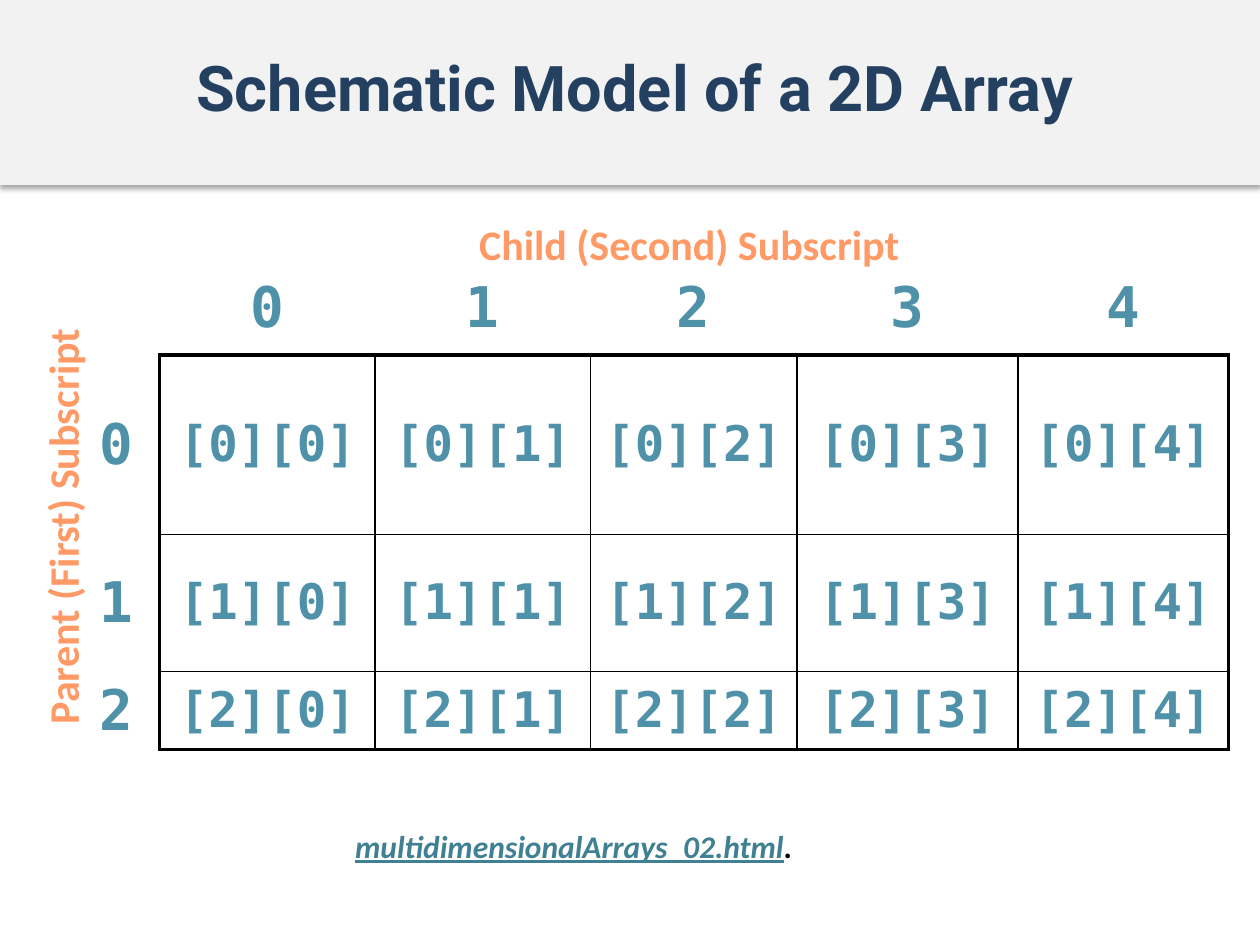
from lxml.etree import SubElement
from pptx import Presentation
from pptx.dml.color import RGBColor
from pptx.enum.shapes import MSO_SHAPE
from pptx.enum.text import MSO_ANCHOR, MSO_AUTO_SIZE, PP_ALIGN
from pptx.oxml.ns import qn
from pptx.util import Cm, Pt

COLORS = {
    "band": "F2F2F2",
    "title": "244061",
    "subscript": "4E91A8",
    "axis": "FF9966",
    "link": "408093",
    "black": "000000",
}
COLUMN_WIDTHS = [1.75, 4.34, 4.34, 4.17, 4.45, 4.24]
ROW_HEIGHTS = [1.9, 3.61, 2.77, 1.57]
PLAIN_TABLE_STYLE = "{2D5ABB26-0587-4C30-8999-92F81FD0307C}"
THICK, THIN = 2.25, 1


def add_run(paragraph, text, font_name, size, color, bold=True):
    run = paragraph.add_run()
    run.text = text
    run.font.name = font_name
    run.font.size = Pt(size)
    run.font.bold = bold
    run.font.color.rgb = RGBColor.from_string(COLORS[color])
    return run


def add_solid_fill(parent, color, alpha=None):
    fill = SubElement(parent, qn("a:solidFill")) if alpha is None else parent
    color_element = SubElement(fill, qn("a:srgbClr"), val=COLORS[color])
    if alpha is not None:
        SubElement(color_element, qn("a:alpha"), val=str(alpha * 1000))


def add_band(slide, left, top, width, height):
    band = slide.shapes.add_shape(
        MSO_SHAPE.RECTANGLE, Cm(left), Cm(top), Cm(width), Cm(height))
    band.fill.solid()
    band.fill.fore_color.rgb = RGBColor.from_string(COLORS["band"])
    band.line.fill.background()
    band.shadow.inherit = False
    effects = band.element.spPr.find(qn("a:effectLst"))
    shadow = SubElement(
        effects, qn("a:outerShdw"), blurRad=str(Pt(3.1)), dist=str(Pt(1.8)),
        dir="5400000", rotWithShape="0")
    add_solid_fill(shadow, "black", alpha=35)
    slide.shapes.element.insert(2, band.element)


def add_title(slide, left, top, width, height):
    add_band(slide, 0, 0, 25.4, 3.73)
    title = slide.shapes.title
    title.left, title.top = Cm(left), Cm(top)
    title.width, title.height = Cm(width), Cm(height)
    title.text_frame.vertical_anchor = MSO_ANCHOR.MIDDLE
    paragraph = title.text_frame.paragraphs[0]
    paragraph.alignment = PP_ALIGN.CENTER
    add_run(paragraph, "Schematic Model of a 2D Array", "Roboto", 36, "title")


def add_text_box(slide, left, top, width, height, wrap=True):
    box = slide.shapes.add_textbox(Cm(left), Cm(top), Cm(width), Cm(height))
    box.text_frame.word_wrap = wrap
    box.text_frame.auto_size = MSO_AUTO_SIZE.SHAPE_TO_FIT_TEXT
    return box


def add_axis_label(slide, text, left, top, width, height, rotation=0):
    box = add_text_box(slide, left, top, width, height)
    box.rotation = rotation
    paragraph = box.text_frame.paragraphs[0]
    paragraph.alignment = PP_ALIGN.CENTER
    add_run(paragraph, text, "Calibri", 24, "axis")


def set_borders(cell, widths):
    properties = cell._tc.get_or_add_tcPr()
    for side in "LRTB":
        width = widths.get(side, 0)
        line = SubElement(properties, qn(f"a:ln{side}"), w=str(Pt(width)))
        if width:
            add_solid_fill(line, "black")
        else:
            SubElement(line, qn("a:noFill"))


def border_widths(row, column):
    last_row, last_column = len(ROW_HEIGHTS) - 1, len(COLUMN_WIDTHS) - 1
    if row and column:
        return {
            "L": THICK if column == 1 else THIN,
            "R": THICK if column == last_column else THIN,
            "T": THICK if row == 1 else THIN,
            "B": THICK if row == last_row else THIN,
        }
    if row:
        return {"R": THICK}
    return {"B": THICK} if column else {}


def cell_text(row, column):
    if row and column:
        return f"[{row - 1}][{column - 1}]"
    return str(max(row, column) - 1) if row or column else ""


def add_array_table(slide, left, top):
    frame = slide.shapes.add_table(
        len(ROW_HEIGHTS), len(COLUMN_WIDTHS), Cm(left), Cm(top),
        Cm(sum(COLUMN_WIDTHS)), Cm(sum(ROW_HEIGHTS)))
    table = frame.table
    table.first_row = table.horz_banding = False
    next(frame.element.iter(qn("a:tableStyleId"))).text = PLAIN_TABLE_STYLE
    for column, width in zip(table.columns, COLUMN_WIDTHS):
        column.width = Cm(width)
    for row_index, height in enumerate(ROW_HEIGHTS):
        table.rows[row_index].height = Cm(height)
        for column_index in range(len(COLUMN_WIDTHS)):
            cell = table.cell(row_index, column_index)
            cell.vertical_anchor = MSO_ANCHOR.MIDDLE
            set_borders(cell, border_widths(row_index, column_index))
            cell.fill.background()
            text = cell_text(row_index, column_index)
            if text:
                paragraph = cell.text_frame.paragraphs[0]
                paragraph.alignment = PP_ALIGN.CENTER
                size = 28 if row_index and column_index else 32
                add_run(paragraph, text, "DejaVu Sans Mono", size, "subscript")


def add_file_reference(slide, left, top, width, height):
    box = add_text_box(slide, left, top, width, height, wrap=False)
    paragraph = box.text_frame.paragraphs[0]
    name = add_run(
        paragraph, "multidimensionalArrays_02.html", "Calibri", 18, "link")
    name.font.italic = name.font.underline = True
    period = add_run(paragraph, ".", "Calibri", 18, "black")
    period.font.italic = True


def main():
    presentation = Presentation()
    presentation.slide_width, presentation.slide_height = Cm(25.4), Cm(19.05)
    slide = presentation.slides.add_slide(presentation.slide_layouts[5])
    add_title(slide, 0.48, 0.23, 24.64, 3)
    add_array_table(slide, 1.47, 5.26)
    add_axis_label(slide, "Child (Second) Subscript", 3.2, 4.29, 21.39, 1.27)
    add_axis_label(
        slide, "Parent (First) Subscript", -4.5, 9.98, 11.51, 1.27, rotation=270)
    add_file_reference(slide, 6.91, 16.54, 10.59, 1.02)
    presentation.save("out.pptx")


if __name__ == "__main__":
    main()
